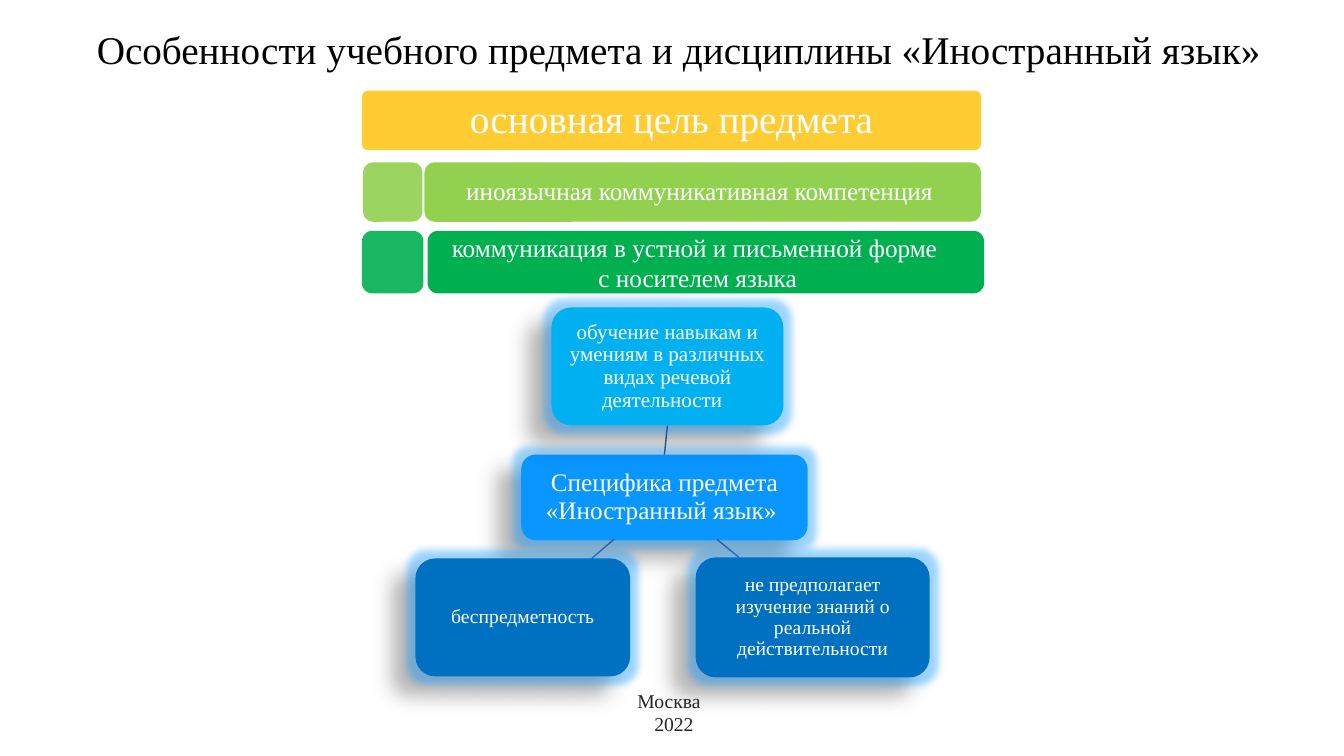
from lxml import etree
from pptx import Presentation
from pptx.dml.color import RGBColor
from pptx.enum import shapes, text
from pptx.oxml import ns
from pptx.util import Inches, Pt

FONT = "Times New Roman"
BLACK = RGBColor(0x00, 0x00, 0x00)
WHITE = RGBColor(0xFF, 0xFF, 0xFF)
CHARCOAL = RGBColor(0x26, 0x26, 0x26)
GOLD = RGBColor(0xFF, 0xC0, 0x00)
LIME = RGBColor(0x92, 0xD0, 0x50)
GREEN = RGBColor(0x00, 0xB0, 0x50)
SKY = RGBColor(0x00, 0xB0, 0xF0)
AZURE = RGBColor(0x09, 0x96, 0xFF)
BLUE = RGBColor(0x00, 0x70, 0xC0)
LINK = RGBColor(0x36, 0x5B, 0x9D)

HEADING = "Особенности учебного предмета и дисциплины «Иностранный язык»"
GOAL = ("основная цель предмета", (3.59, 0.9, 6.14, 0.59))
AIMS = [
    (["иноязычная коммуникативная компетенция "], LIME, 0.9,
     (3.6, 1.61, 0.59, 0.59), (4.21, 1.61, 5.52, 0.59), (0.14, 0.14)),
    (["коммуникация в устной и письменной форме ", "с носителем языка"], GREEN, 1,
     (3.59, 2.29, 0.61, 0.62), (4.24, 2.29, 5.52, 0.62), (0.02, 0.18)),
]
SUBJECT = ("Специфика предмета «Иностранный язык» ", (5.17, 4.51, 2.84, 0.85))
FEATURES = [
    ("обучение навыкам и умениям в различных видах речевой деятельности\u00a0\u00a0",
     15, SKY, (5.47, 3.05, 2.3, 1.17), (6.6, 4.51, 6.61, 4.23), True),
    ("не предполагает изучение знаний о реальной действительности",
     14, BLUE, (6.9, 5.53, 2.32, 1.19), (7.11, 5.35, 7.33, 5.53), False),
    ("беспредметность",
     14, BLUE, (4.12, 5.54, 2.13, 1.17), (6.09, 5.35, 5.87, 5.54), False),
]
IMPRINT = (["Москва ", " 2022"], (6.02, 6.78, 1.28, 0.57))


def inches(values):
    return [Inches(value) for value in values]


def write(frame, lines, size, color, spacing=0.9, align=text.PP_ALIGN.CENTER):
    frame.word_wrap = True
    frame.vertical_anchor = text.MSO_ANCHOR.MIDDLE
    for index, line in enumerate(lines):
        paragraph = frame.add_paragraph() if index else frame.paragraphs[0]
        paragraph.alignment = align
        paragraph.line_spacing = spacing
        run = paragraph.add_run()
        run.text = line
        run.font.name = FONT
        run.font.size = Pt(size)
        run.font.color.rgb = color


def add_box(slide, place, color, opacity=100, radius=0.167):
    box = slide.shapes.add_shape(shapes.MSO_SHAPE.ROUNDED_RECTANGLE, *inches(place))
    box.adjustments[0] = radius
    box.shadow.inherit = False
    box.fill.solid()
    box.fill.fore_color.rgb = color
    box.line.fill.background()
    if opacity < 100:
        tint = box.fill._xPr.find(ns.qn("a:solidFill"))[0]
        etree.SubElement(tint, ns.qn("a:alpha"), val=str(opacity * 1000))
    return box


def set_margins(frame, left, right, vertical):
    frame.margin_left, frame.margin_right = Inches(left), Inches(right)
    frame.margin_top = frame.margin_bottom = Inches(vertical)


def add_effect(effects, tag, color, opacity, **settings):
    effect = etree.SubElement(effects, ns.qn(tag), **settings)
    tint = etree.SubElement(effect, ns.qn("a:srgbClr"), val=str(color))
    etree.SubElement(tint, ns.qn("a:alpha"), val=str(opacity * 1000))


def add_node(slide, label, size, color, place):
    node = add_box(slide, place, color)
    effects = node._element.spPr.find(ns.qn("a:effectLst"))
    add_effect(effects, "a:glow", AZURE, 40, rad=str(Pt(11)))
    add_effect(effects, "a:outerShdw", BLACK, 28, blurRad=str(Pt(11.8)),
               dist=str(Pt(19.7)), dir=str(141 * 60000), algn="tr", rotWithShape="0")
    set_margins(node.text_frame, 0.04, 0.04, 0.04)
    write(node.text_frame, [label], size, WHITE)
    return node


def add_link(slide, ends):
    link = slide.shapes.add_connector(shapes.MSO_CONNECTOR.STRAIGHT, *inches(ends))
    link.line.color.rgb = LINK
    link.line.width = Pt(1)
    etree.SubElement(link._element.spPr, ns.qn("a:effectLst"))
    return link


def main():
    """Build the slide on the features of the foreign language subject."""
    deck = Presentation()
    deck.slide_width, deck.slide_height = Inches(13.33), Inches(7.5)
    slide = deck.slides.add_slide(deck.slide_layouts[5])

    heading = slide.shapes.title
    heading.left, heading.top, heading.width, heading.height = inches((0.86, 0.04, 11.77, 0.95))
    write(heading.text_frame, [HEADING], 28, BLACK, align=text.PP_ALIGN.LEFT)

    goal_text, goal_place = GOAL
    goal = add_box(slide, goal_place, GOLD, 80, 0.1)
    set_margins(goal.text_frame, 0.06, 0.06, 0.02)
    write(goal.text_frame, [goal_text], 28, WHITE)

    for lines, color, spacing, marker_place, aim_place, (left, right) in AIMS:
        add_box(slide, marker_place, color, 90)
        aim = add_box(slide, aim_place, color)
        set_margins(aim.text_frame, left, right, 0)
        write(aim.text_frame, lines, 18, WHITE, spacing)

    subject_text, subject_place = SUBJECT
    subject = add_node(slide, subject_text, 18, AZURE, subject_place)
    for label, size, color, place, ends, joined in FEATURES:
        link = add_link(slide, ends)
        feature = add_node(slide, label, size, color, place)
        if joined:
            link.begin_connect(subject, 0)
            link.end_connect(feature, 2)

    imprint_lines, imprint_place = IMPRINT
    imprint = slide.shapes.add_textbox(*inches(imprint_place))
    write(imprint.text_frame, imprint_lines, 14, CHARCOAL, 1)

    deck.save("out.pptx")


if __name__ == "__main__":
    main()
